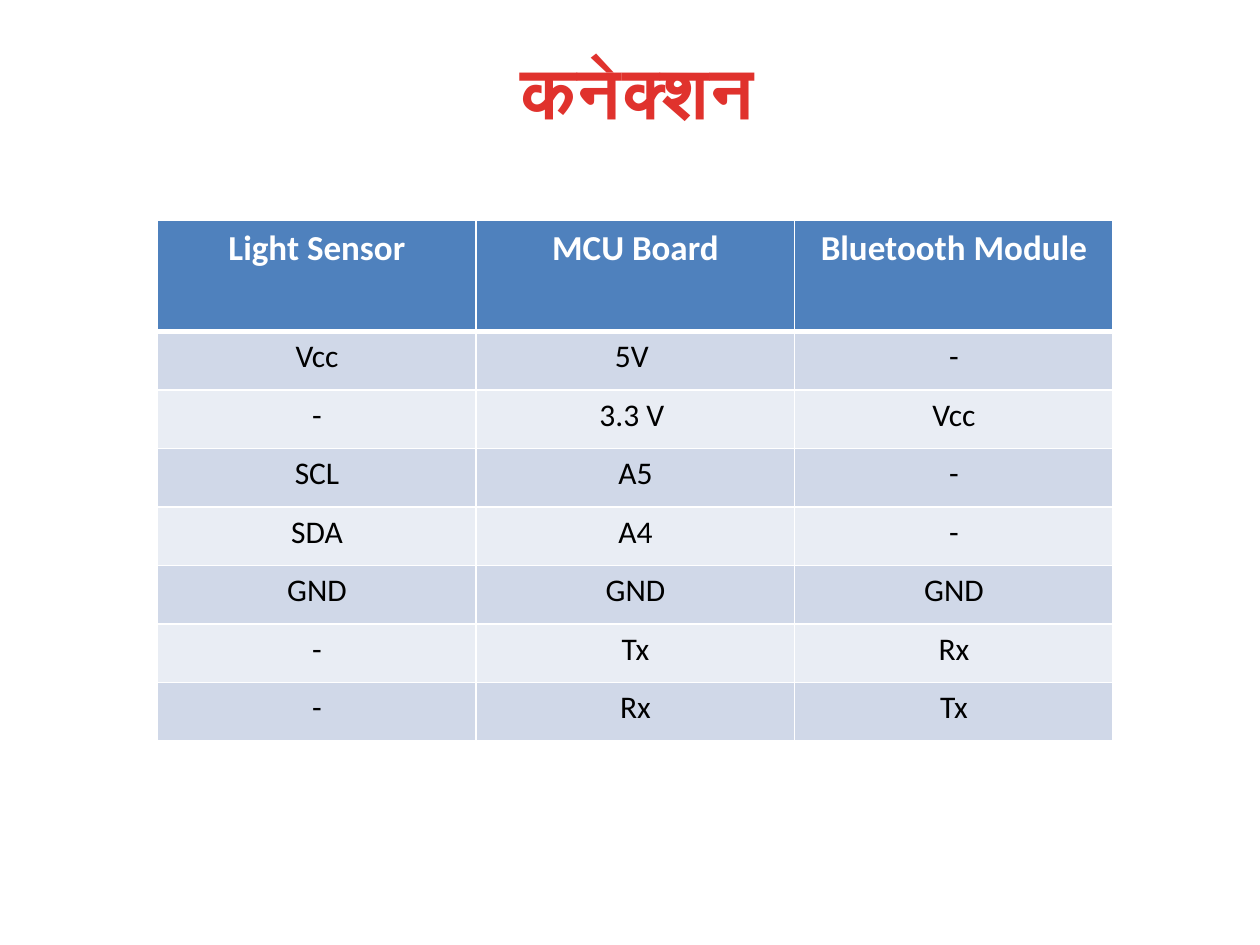
import pptx
import pptx.util
import pptx.dml.color
import pptx.enum.text
import pptx.oxml.ns
import lxml.etree

Cm, Pt = pptx.util.Cm, pptx.util.Pt
CENTER = pptx.enum.text.PP_ALIGN.CENTER
MIDDLE = pptx.enum.text.MSO_ANCHOR.MIDDLE

CONNECTIONS = [
    ("Light Sensor", "MCU Board", "Bluetooth Module"),
    ("Vcc", "5V ", "-"),
    ("-", "3.3 V ", "Vcc"),
    ("SCL", "A5", "-"),
    ("SDA", "A4", "-"),
    ("GND", "GND", "GND"),
    ("-", "Tx", "Rx"),
    ("-", "Rx", "Tx"),
]


def color(value):
    return pptx.dml.color.RGBColor.from_string(value)


class ConnectionSlide:
    red, blue, white, black = "E0322D", "4F81BD", "FFFFFF", "000000"
    bands = ("D0D8E8", "E9EDF4")
    title_font, table_font = "Arial", "Calibri"

    def __init__(self, deck):
        self.slide = deck.slides.add_slide(deck.slide_layouts[5])

    def add_text(self, frame, text, font, size, ink, bold):
        paragraph = frame.paragraphs[0]
        paragraph.alignment = CENTER
        run = paragraph.add_run()
        run.text = text
        run.font.name = font
        run.font.size = Pt(size)
        run.font.bold = bold
        run.font.color.rgb = color(ink)
        return paragraph, run

    def title(self, text, left, top, width, height):
        heading = self.slide.shapes.title
        heading.left, heading.top = Cm(left), Cm(top)
        heading.width, heading.height = Cm(width), Cm(height)
        frame = heading.text_frame
        frame.vertical_anchor = MIDDLE
        frame.auto_size = pptx.enum.text.MSO_AUTO_SIZE.NONE
        frame.margin_top = frame.margin_bottom = 0
        paragraph, run = self.add_text(
            frame, text, self.title_font, 41, self.red, True)
        paragraph.line_spacing = 0.8
        run._r.get_or_add_rPr().set("spc", "50")

    def borders(self, cell, top, bottom):
        properties = cell._tc.get_or_add_tcPr()
        qn = pptx.oxml.ns.qn
        for side, points in (("L", 1), ("R", 1), ("T", top), ("B", bottom)):
            line = lxml.etree.SubElement(
                properties, qn(f"a:ln{side}"), w=str(Pt(points)))
            fill = lxml.etree.SubElement(line, qn("a:solidFill"))
            lxml.etree.SubElement(fill, qn("a:srgbClr"), val=self.white)

    def cell(self, cell, text, row):
        header = row == 0
        # The thick rule below the header is shared with the first body row.
        self.borders(cell, 3 if row == 1 else 1, 3 if header else 1)
        cell.fill.solid()
        cell.fill.fore_color.rgb = color(
            self.blue if header else self.bands[(row - 1) % 2])
        self.add_text(cell.text_frame, text, self.table_font, 20 if header else 18,
                      self.white if header else self.black, header)

    def table(self, rows, left, top, column_width, header_height, row_height):
        count = len(rows[0])
        height = header_height + row_height * (len(rows) - 1)
        table = self.slide.shapes.add_table(
            len(rows), count, Cm(left), Cm(top),
            Cm(column_width * count), Cm(height)).table
        for column in table.columns:
            column.width = Cm(column_width)
        for number, values in enumerate(rows):
            table.rows[number].height = Cm(row_height if number else header_height)
            for column, text in enumerate(values):
                self.cell(table.cell(number, column), text, number)


def main():
    deck = pptx.Presentation()
    deck.slide_width, deck.slide_height = Cm(25.4), Cm(19.05)
    connections = ConnectionSlide(deck)
    connections.title("कनेक्शन", 7.92, 1.07, 9.86, 1.8)
    connections.table(CONNECTIONS, 3.18, 4.45, 6.42, 2.23, 1.18)
    deck.save("out.pptx")


if __name__ == "__main__":
    main()
